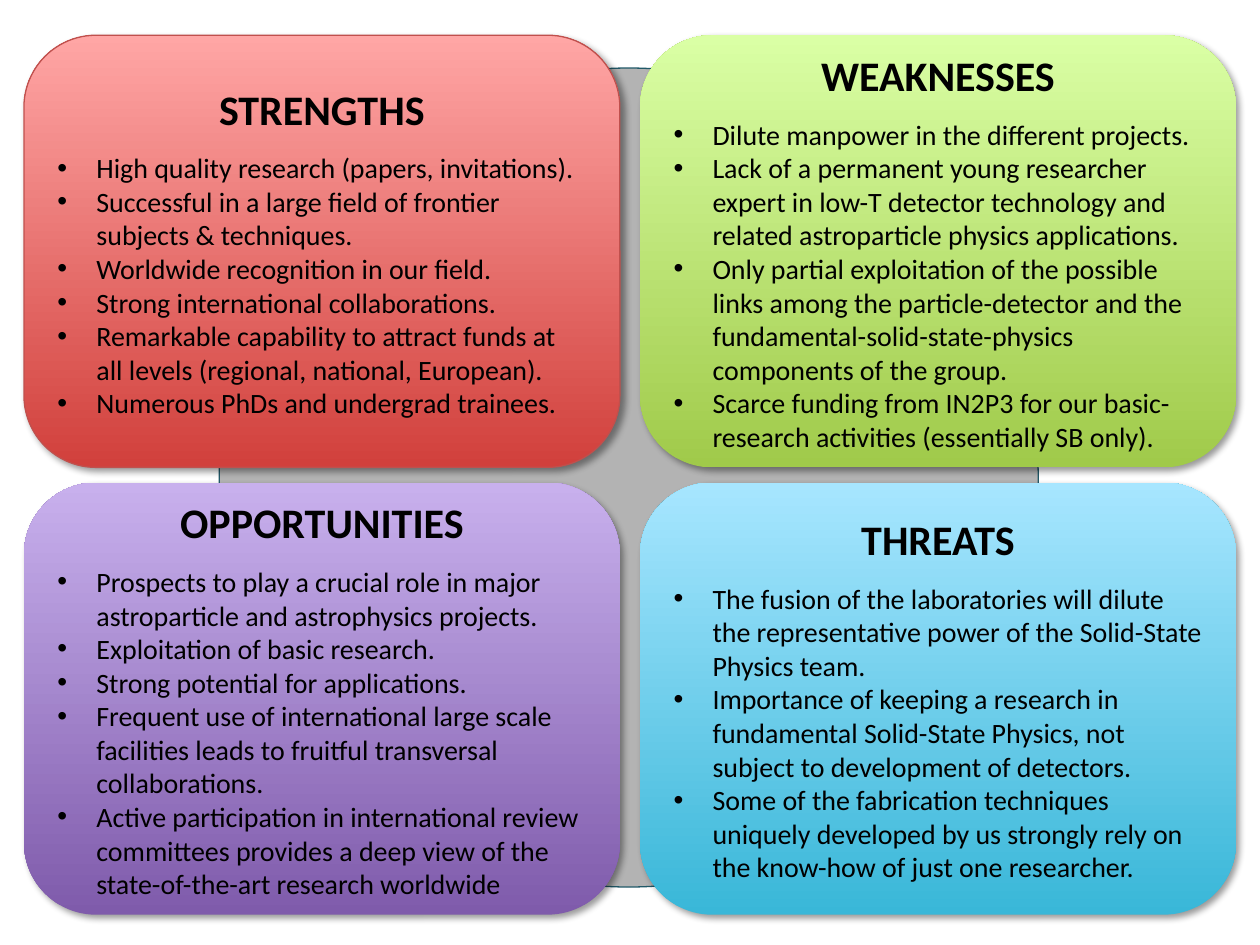
from lxml.etree import SubElement
from pptx import Presentation
from pptx.dml.color import RGBColor
from pptx.enum.shapes import MSO_SHAPE as Shape
from pptx.enum.text import MSO_ANCHOR as Anchor, PP_ALIGN as Align
from pptx.oxml.ns import qn
from pptx.util import Inches, Pt

COLORS = {
    "text": "000000",
    "shadow": "000000",
    "circle": "B3B3B3",
    "circle_line": "215968",
    "strengths_line": "C0504D",
}

# Title, bottom colour, top colour, outline, bullets; in reading order
QUADRANTS = [
    ("STRENGTHS", "D1403C", "FFA6A5", COLORS["strengths_line"], [
        "High quality research (papers, invitations).",
        "Successful in a large field of frontier subjects & techniques.",
        "Worldwide recognition in our field.",
        "Strong international collaborations.",
        "Remarkable capability to attract funds at all levels (regional, national, European).",
        "Numerous PhDs and undergrad trainees.",
    ]),
    ("WEAKNESSES", "A0CA4A", "DAFFA5", None, [
        "Dilute manpower in the different projects.",
        "Lack of a permanent young researcher expert in low-T detector technology "
        "and related astroparticle physics applications.",
        "Only partial exploitation of the possible links among the particle-detector "
        "and the fundamental-solid-state-physics components of the group.",
        "Scarce funding from IN2P3 for our basic-research activities (essentially SB only).",
    ]),
    ("OPPORTUNITIES", "7F5BAB", "C8B0ED", None, [
        "Prospects to play a crucial role in major astroparticle and astrophysics projects.",
        "Exploitation of basic research.",
        "Strong potential for applications.",
        "Frequent use of international large scale facilities leads to fruitful "
        "transversal collaborations.",
        "Active participation in international review committees provides a deep view "
        "of the state-of-the-art research worldwide",
    ]),
    ("THREATS", "39B7D8", "A7E6FF", None, [
        "The fusion of the laboratories will dilute the representative power of the "
        "Solid-State Physics team.",
        "Importance of keeping a research in fundamental Solid-State Physics, not "
        "subject to development of detectors.",
        "Some of the fabrication techniques uniquely developed by us strongly rely on "
        "the know-how of just one researcher.",
    ]),
]

FONT = "Calibri"
LEFT, TOP = 0.19, 0.28
CARD_WIDTH, CARD_HEIGHT = 4.73, 3.43
COLUMN_STEP, ROW_STEP = 4.89, 3.55
INDENT = Inches(0.31)


def rgb(value):
    return RGBColor.from_string(value)


def set_line(shape, color):
    if color:
        shape.line.color.rgb = rgb(color)
        shape.line.width = Pt(0.75)
    else:
        shape.line.fill.background()


def add_shadow(shape):
    shape.shadow.inherit = False
    effects = shape._element.spPr.find(qn("a:effectLst"))
    shadow = SubElement(effects, qn("a:outerShdw"), blurRad=str(Pt(4)),
                        dist=str(Pt(3)), dir=str(45 * 60000), rotWithShape="0")
    color = SubElement(shadow, qn("a:srgbClr"), val=COLORS["shadow"])
    SubElement(color, qn("a:alpha"), val="40000")


def add_text(paragraph, text, size, bold):
    run = paragraph.add_run()
    run.text = text
    run.font.name = FONT
    run.font.size = Pt(size)
    run.font.bold = bold
    run.font.color.rgb = rgb(COLORS["text"])


def make_bullet(paragraph):
    properties = paragraph._p.get_or_add_pPr()
    properties.set("marL", str(INDENT))
    properties.set("indent", str(-INDENT))
    SubElement(properties, qn("a:buFont"), typeface="Arial")
    SubElement(properties, qn("a:buChar"), char="•")


def add_quadrant(slide, index, title, bottom, top, outline, bullets):
    row, column = divmod(index, 2)
    card = slide.shapes.add_shape(
        Shape.ROUNDED_RECTANGLE,
        Inches(LEFT + column * COLUMN_STEP), Inches(TOP + row * ROW_STEP),
        Inches(CARD_WIDTH), Inches(CARD_HEIGHT))
    card.fill.gradient()
    card.fill.gradient_angle = 90
    for stop, color in zip(card.fill.gradient_stops, (bottom, top)):
        stop.color.rgb = rgb(color)
    set_line(card, outline)
    add_shadow(card)

    frame = card.text_frame
    frame.word_wrap = True
    frame.vertical_anchor = Anchor.MIDDLE
    heading = frame.paragraphs[0]
    heading.alignment = Align.CENTER
    heading.space_after = Pt(9.8)
    add_text(heading, title, 24, True)
    for bullet in bullets:
        paragraph = frame.add_paragraph()
        paragraph.alignment = Align.LEFT
        make_bullet(paragraph)
        add_text(paragraph, bullet, 16, False)


def main():
    presentation = Presentation()
    presentation.slide_width, presentation.slide_height = Inches(10), Inches(7.5)
    slide = presentation.slides.add_slide(presentation.slide_layouts[6])

    circle = slide.shapes.add_shape(
        Shape.OVAL, Inches(1.74), Inches(0.54), Inches(6.5), Inches(6.5))
    circle.fill.solid()
    circle.fill.fore_color.rgb = rgb(COLORS["circle"])
    set_line(circle, COLORS["circle_line"])
    circle.shadow.inherit = False

    for index, quadrant in enumerate(QUADRANTS):
        add_quadrant(slide, index, *quadrant)
    presentation.save("out.pptx")


if __name__ == "__main__":
    main()
